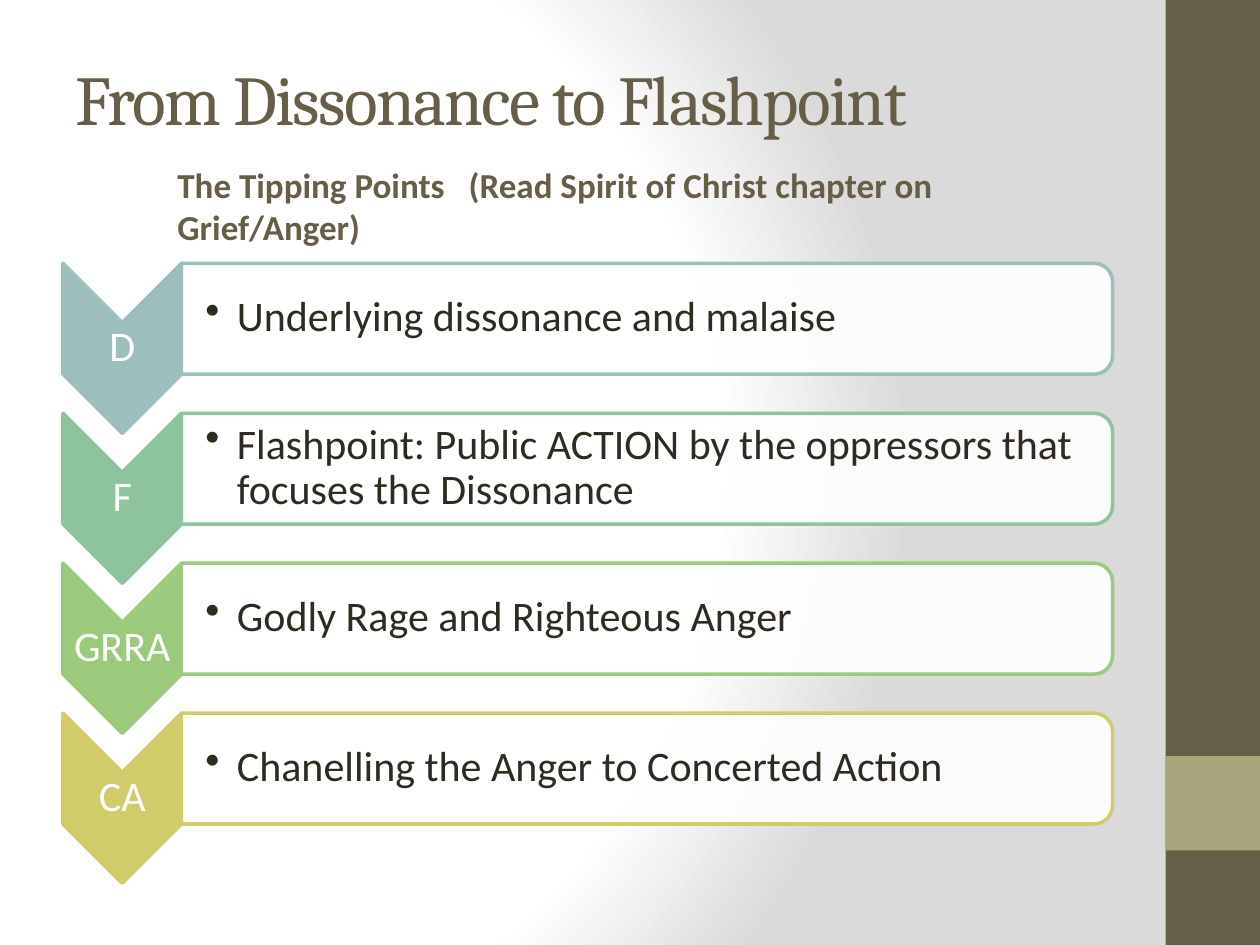
import dataclasses

import lxml.etree
import pptx
import pptx.dml.color
import pptx.enum.shapes
import pptx.enum.text
import pptx.oxml
import pptx.oxml.ns
import pptx.util

SHAPES = pptx.enum.shapes.MSO_SHAPE
ALIGN = pptx.enum.text.PP_ALIGN
ANCHOR = pptx.enum.text.MSO_ANCHOR
inches = pptx.util.Inches


@dataclasses.dataclass(frozen=True)
class Theme:
    brown: str = "675E47"
    olive: str = "A9A57C"
    ink: str = "2F2B20"
    white: str = "FFFFFF"
    gray: str = "DADADA"
    heading_font: str = "Cambria"
    body_font: str = "Calibri"
    title_size: int = 40
    subtitle_size: int = 20
    step_size: int = 24
    outline: int = 2


@dataclasses.dataclass(frozen=True)
class Grid:
    width: float = 10
    height: float = 7.5
    left: float = 0.5
    content_width: float = 8.33
    badge_width: float = 0.94
    badge_height: float = 1.35
    bar_height: float = 0.88
    first_row: float = 2.09
    row_pitch: float = 1.19

    def row_top(self, row):
        return self.first_row + row * self.row_pitch


THEME = Theme()
GRID = Grid()

# Badge letters, step text, colour
STEPS = [
    ("D", "Underlying dissonance and malaise", "9CBEBD"),
    ("F", "Flashpoint: Public ACTION by the oppressors that focuses the Dissonance", "8DC49D"),
    ("GRRA", "Godly Rage and Righteous Anger", "9BCA7D"),
    ("CA", "Chanelling the Anger to Concerted Action", "D2CB6C"),
]


def apply_format(target, values):
    for attribute, value in values.items():
        setattr(target, attribute, value)


def rgb(color):
    return pptx.dml.color.RGBColor.from_string(color)


def paint_background(slide):
    """Radial fade from white to gray towards the right."""
    slide.background.fill.solid()
    solid = slide.background._cSld.find(".//" + pptx.oxml.ns.qn("a:solidFill"))
    stops = "".join(
        f'<a:gs pos="{share * 1000}"><a:srgbClr val="{color}"/></a:gs>'
        for share, color in [(0, THEME.white), (75, THEME.white), (100, THEME.gray)]
    )
    gradient = pptx.oxml.parse_xml(
        f'<a:gradFill rotWithShape="1" {pptx.oxml.ns.nsdecls("a")}><a:gsLst>{stops}</a:gsLst>'
        '<a:path path="circle"><a:fillToRect l="20000" t="50000" r="100000" b="50000"/>'
        "</a:path></a:gradFill>"
    )
    solid.getparent().replace(solid, gradient)


def add_block(slide, kind, box, fill, line=None, opacity=100, turned=False):
    """Add a filled shape; a turned one is rotated by 90° to cover the box."""
    left, top, width, height = box
    if turned:
        left, top = left + (width - height) / 2, top + (height - width) / 2
        width, height = height, width
    block = slide.shapes.add_shape(kind, *map(inches, (left, top, width, height)))
    block.shadow.inherit = False
    block.rotation = 90 if turned else 0
    block.fill.solid()
    block.fill.fore_color.rgb = rgb(fill)
    if opacity < 100:
        color = block._element.spPr.find(".//" + pptx.oxml.ns.qn("a:srgbClr"))
        lxml.etree.SubElement(color, pptx.oxml.ns.qn("a:alpha"), val=str(opacity * 1000))
    if line:
        block.line.color.rgb = rgb(line)
        block.line.width = pptx.util.Pt(THEME.outline)
    else:
        block.line.fill.background()


def add_text(slide, box, runs, font, color, frame=None, paragraph=None):
    """Add one paragraph of (text, letter spacing in points) runs."""
    label = slide.shapes.add_textbox(*map(inches, box)).text_frame
    apply_format(label, {"word_wrap": True, **(frame or {})})
    line = label.paragraphs[0]
    apply_format(line, paragraph or {})
    for words, spacing in runs:
        run = line.add_run()
        run.text = words
        apply_format(run.font, font)
        run.font.color.rgb = rgb(color)
        if spacing:
            run.font._element.set("spc", str(spacing * 100))
    return line


def indent(paragraph, margin, first_line=0, bullet=None):
    properties = paragraph._p.get_or_add_pPr()
    properties.set("marL", str(inches(margin)))
    properties.set("indent", str(inches(first_line)))
    if bullet:
        lxml.etree.SubElement(properties, pptx.oxml.ns.qn("a:buChar"), char=bullet)


def add_sidebar(slide):
    width = GRID.width * 0.075
    left = GRID.width - width
    add_block(slide, SHAPES.RECTANGLE, (left, 0, width, GRID.height), THEME.brown)
    add_block(slide, SHAPES.RECTANGLE, (left, GRID.height * 0.8, width, GRID.height * 0.1), THEME.olive)


def add_headings(slide):
    add_text(
        slide, (GRID.left, 0.3, GRID.content_width, 0.95),
        [("From Dissonance to Flashpoint", -1)],
        {"name": THEME.heading_font, "size": pptx.util.Pt(THEME.title_size)},
        THEME.brown, {"vertical_anchor": ANCHOR.MIDDLE},
    )
    subtitle = add_text(
        slide, (GRID.left, 1.25, GRID.content_width, 0.42),
        [("The Tipping Points", 0), (" ", 9), ("(Read Spirit of Christ chapter on Grief/Anger)", 0)],
        {"name": THEME.body_font, "size": pptx.util.Pt(THEME.subtitle_size), "bold": True},
        THEME.brown,
    )
    indent(subtitle, 0.81)


def add_step(slide, row, letters, words, color):
    top = GRID.row_top(row)
    bar_left = GRID.left + GRID.badge_width
    bar_width = GRID.content_width - GRID.badge_width
    font = {"name": THEME.body_font, "size": pptx.util.Pt(THEME.step_size)}
    insets = dict.fromkeys(
        ("margin_left", "margin_top", "margin_right", "margin_bottom"), inches(0.02))

    add_block(slide, SHAPES.CHEVRON, (GRID.left, top, GRID.badge_width, GRID.badge_height),
              color, color, turned=True)
    add_text(slide, (GRID.left, top + GRID.badge_width / 2, GRID.badge_width, 0.4),
             [(letters, 0)], font, THEME.white, insets,
             {"alignment": ALIGN.CENTER, "line_spacing": 0.9})

    add_block(slide, SHAPES.ROUND_2_SAME_RECTANGLE, (bar_left, top, bar_width, GRID.bar_height),
              THEME.white, color, opacity=90, turned=True)
    step = add_text(slide, (bar_left, top + 0.04, bar_width - 0.04, GRID.bar_height - 0.09),
                    [(words, 0)], font, THEME.ink,
                    {**insets, "margin_left": inches(0.19), "vertical_anchor": ANCHOR.MIDDLE},
                    {"line_spacing": 0.9})
    indent(step, 0.25, -0.25, "•")


def main():
    deck = pptx.Presentation()
    apply_format(deck, {"slide_width": inches(GRID.width), "slide_height": inches(GRID.height)})
    slide = deck.slides.add_slide(deck.slide_layouts[6])
    paint_background(slide)
    add_sidebar(slide)
    add_headings(slide)
    for row, step in enumerate(STEPS):
        add_step(slide, row, *step)
    deck.save("out.pptx")


if __name__ == "__main__":
    main()
